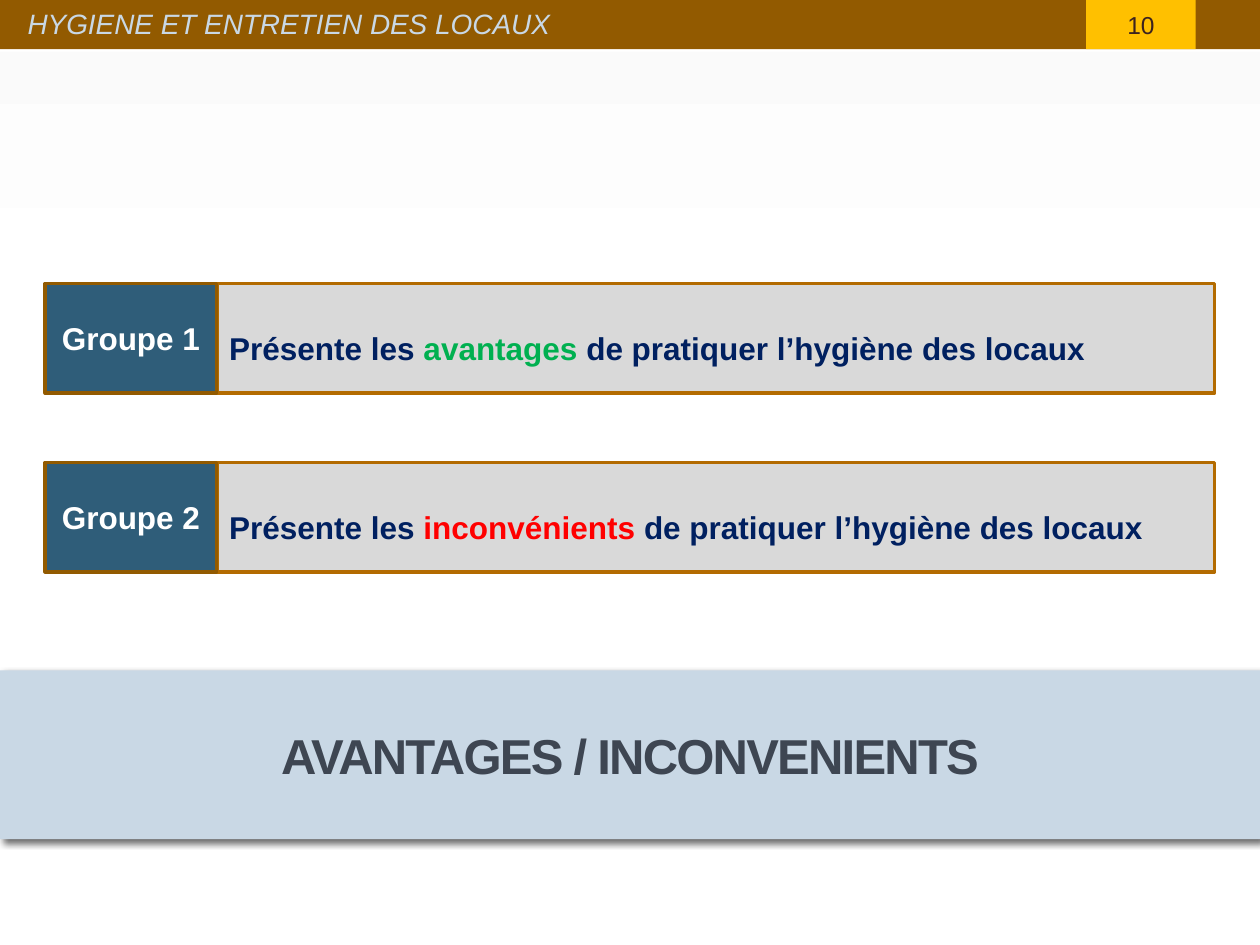
from lxml import etree
from pptx import Presentation
from pptx import util as u
from pptx.dml.color import RGBColor
from pptx.enum import shapes, text
from pptx.oxml import ns

NAVY = "002060"


def color(value):
    return RGBColor.from_string(value)


def add_box(parent, left, top, width, height, spans=(), fill=None, line=None,
            size=18, bold=False, italic=False, align=text.PP_ALIGN.LEFT,
            line_spacing=None, tracking=None):
    """Add a rectangle whose text is a list of (words, colour) spans."""
    box = parent.add_shape(shapes.MSO_SHAPE.RECTANGLE, u.Inches(left),
                           u.Inches(top), u.Inches(width), u.Inches(height))
    box.shadow.inherit = False
    if fill:
        box.fill.solid()
        box.fill.fore_color.rgb = color(fill)
    else:
        box.fill.background()
    if line:
        box.line.color.rgb = color(line)
        box.line.width = u.Pt(2.08)
    else:
        box.line.fill.background()
    frame = box.text_frame
    frame.word_wrap = True
    frame.vertical_anchor = text.MSO_ANCHOR.MIDDLE
    para = frame.paragraphs[0]
    para.alignment = align
    if line_spacing:
        para.line_spacing = line_spacing
    for words, shade in spans:
        span = para.add_run()
        span.text = words
        font = span.font
        font.name, font.size = "Arial", u.Pt(size)
        font.bold, font.italic = bold, italic
        font.color.rgb = color(shade)
        if tracking:
            span._r.get_or_add_rPr().set("spc", str(tracking))
    return box


deck = Presentation()
deck.slide_width, deck.slide_height = u.Inches(10), u.Inches(7.5)
page = deck.slides.add_slide(deck.slide_layouts[6])
center = text.PP_ALIGN.CENTER

# Background fading from pale grey to white, top to bottom
backdrop = page.background.fill
backdrop.gradient()
backdrop.gradient_angle = 270
for stop, (position, shade) in zip(backdrop.gradient_stops,
                                   [(0, "FAFAFA"), (0.33, "FFFFFF")]):
    stop.position = position
    stop.color.rgb = color(shade)

# Header band with page number and course title
add_box(page.shapes, 0, 0.16, 10, 0.25, fill="FFFFFF")
add_box(page.shapes, 0, 0, 10, 0.39, fill="925A00")
add_box(page.shapes, 8.62, 0, 0.87, 0.39, [("10", "3C231F")],
        fill="FFC000", size=14, align=center)
add_box(page.shapes, 0.12, 0.01, 8.19, 0.35,
        [("HYGIENE ET ENTRETIEN DES LOCAUX", "C9D8E5")], size=16, italic=True)

# Title band with a soft shadow
title = add_box(page.shapes, 0, 5.32, 10, 1.34,
                [("AVANTAGES / INCONVENIENTS", "3E4652")], fill="C9D8E5",
                size=28, bold=True, align=center, tracking=-100)
effects = title._element.spPr.find(ns.qn("a:effectLst"))
shadow = etree.SubElement(effects, ns.qn("a:outerShdw"),
                          blurRad=str(u.Pt(4)), dist=str(u.Pt(3)),
                          dir="2700000", algn="tl", rotWithShape="0")
black = etree.SubElement(shadow, ns.qn("a:srgbClr"), val="000000")
etree.SubElement(black, ns.qn("a:alpha"), val="59000")

# One row per group: task on the right, label on the left
tasks = [("avantages", "00B050"), ("inconvénients", "FF0000")]
for index, keyword in enumerate(tasks):
    top = 2.25 + 1.42 * index
    row = page.shapes.add_group_shape().shapes
    add_box(row, 1.72, top, 7.92, 0.87,
            [("Présente les ", NAVY), keyword,
             (" de pratiquer l’hygiène des locaux", NAVY)],
            fill="D9D9D9", line="B36B00", bold=True, line_spacing=1.5)
    add_box(row, 0.36, top, 1.36, 0.87, [(f"Groupe {index + 1}", "FFFFFF")],
            fill="2F5D79", line="925A00", bold=True, align=center)

deck.save("out.pptx")
